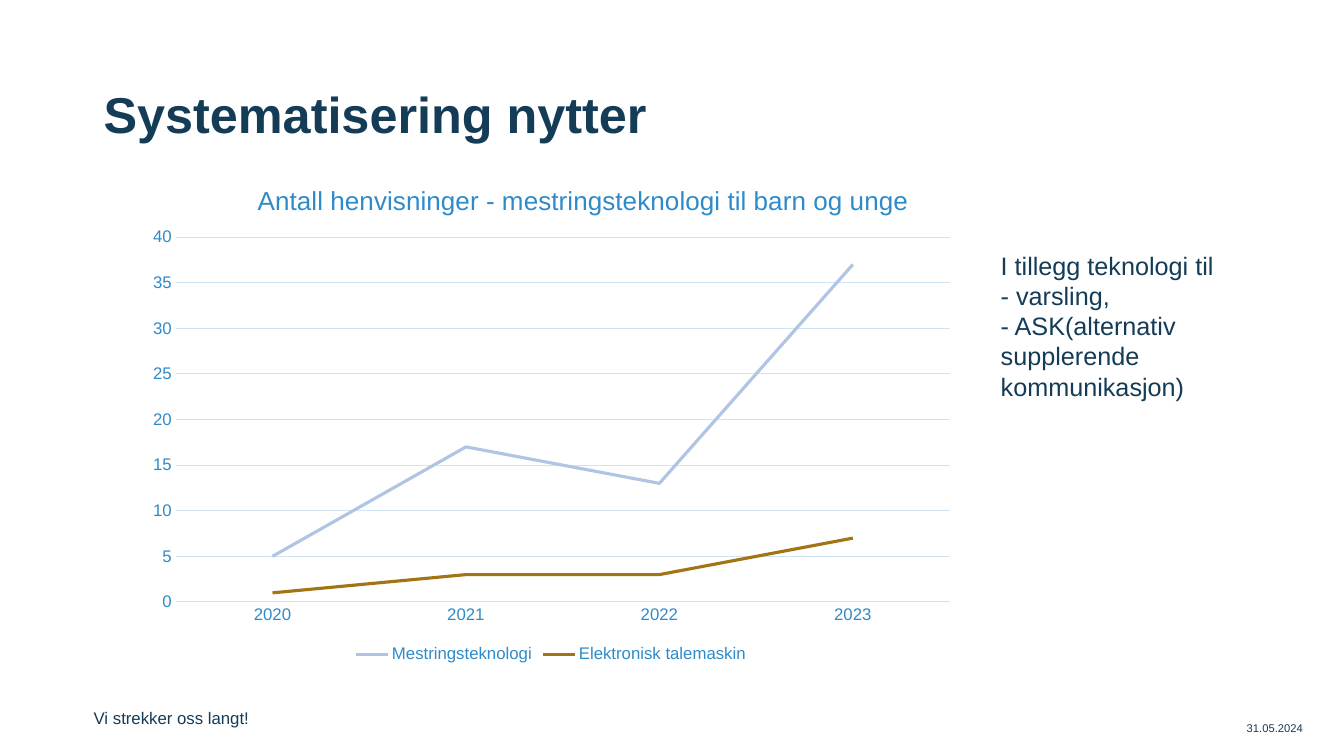
"""Builds a slide with a line chart of referrals for coping technology."""
from lxml import etree
from pptx import Presentation
from pptx.chart.data import CategoryChartData
from pptx.dml.color import RGBColor
from pptx.enum.chart import XL_CHART_TYPE, XL_LEGEND_POSITION, XL_TICK_MARK
from pptx.enum.text import MSO_ANCHOR
from pptx.oxml.ns import qn
from pptx.util import Cm, Pt

TOP, MIDDLE, BOTTOM = MSO_ANCHOR.TOP, MSO_ANCHOR.MIDDLE, MSO_ANCHOR.BOTTOM
LINE_CHART = XL_CHART_TYPE.LINE
LEGEND_BOTTOM = XL_LEGEND_POSITION.BOTTOM
NO_TICK = XL_TICK_MARK.NONE

FONT = "Arial"
NAVY, BLUE, GRID = "143C57", "2E8BCA", "CEE4F4"
NO_MARGINS = (0, 0, 0, 0)
TITLE_MARGINS = (0.25, 0.13, 0.25, 0)
BOX_MARGINS = (0.25, 0.13, 0.25, 0.13)

TEXTS = [
    {"lines": ["Systematisering nytter"], "at": (2.36, 1.75, 25.48, 1.9),
     "size": 36, "bold": True, "anchor": BOTTOM, "margins": TITLE_MARGINS, "spacing": 0.9},
    {"lines": ["31.05.2024"], "at": (31.42, 17.73, 1.65, 1.22),
     "size": 8, "anchor": MIDDLE, "margins": NO_MARGINS},
    {"lines": ["Vi strekker oss langt!"], "at": (2.36, 17.17, 8.05, 1.17),
     "size": 12, "anchor": BOTTOM, "margins": NO_MARGINS},
    {"lines": ["I tillegg teknologi til - varsling,",
               "- ASK(alternativ supplerende kommunikasjon)"],
     "at": (24.97, 6.17, 6.02, 4.11),
     "size": 18, "anchor": TOP, "margins": BOX_MARGINS},
]
CHART_AT = (3.45, 4.11, 20.88, 12.7)
CHART_TITLE = "Antall henvisninger - mestringsteknologi til barn og unge"
YEARS = ["2020", "2021", "2022", "2023"]
SERIES = [
    ("Mestringsteknologi", (5, 17, 13, 37), "B0C5E3"),
    ("Elektronisk talemaskin", (1, 3, 3, 7), "A27413"),
]
TITLE_LAYOUT = {"xMode": "edge", "yMode": "edge", "x": 0.14, "y": 0.03}
PLOT_LAYOUT = {"layoutTarget": "inner", "xMode": "edge", "yMode": "edge",
               "x": 0.047, "y": 0.147, "w": 0.934, "h": 0.724}


def color(value):
    return RGBColor.from_string(value)


def style_font(font, size, value, bold=False):
    for name, setting in {"name": FONT, "size": Pt(size), "bold": bold}.items():
        setattr(font, name, setting)
    font.color.rgb = color(value)


def style_line(line, value, width):
    line.color.rgb = color(value)
    line.width = Pt(width)


def add_text(slide, item):
    frame = slide.shapes.add_textbox(*map(Cm, item["at"])).text_frame
    left, top, right, bottom = map(Cm, item["margins"])
    settings = {"word_wrap": True, "vertical_anchor": item["anchor"],
                "margin_left": left, "margin_top": top,
                "margin_right": right, "margin_bottom": bottom}
    for name, setting in settings.items():
        setattr(frame, name, setting)
    frame.text = "\n".join(item["lines"])
    for paragraph in frame.paragraphs:
        paragraph.line_spacing = item.get("spacing", 1.0)
        style_font(paragraph.runs[0].font, item["size"], NAVY, item.get("bold", False))


def place(element, index, values):
    for old in element.findall(qn("c:layout")):
        element.remove(old)
    layout = etree.Element(qn("c:layout"))
    manual = etree.SubElement(layout, qn("c:manualLayout"))
    for name, value in values.items():
        etree.SubElement(manual, qn(f"c:{name}")).set("val", str(value))
    element.insert(index, layout)


def add_referral_chart(slide):
    data = CategoryChartData()
    data.categories = YEARS
    for name, values, _ in SERIES:
        data.add_series(name, values)
    chart = slide.shapes.add_chart(LINE_CHART, *map(Cm, CHART_AT), data).chart
    style_font(chart.font, 10, NAVY)

    title = chart.chart_title
    title.text_frame.text = CHART_TITLE
    style_font(title.text_frame.paragraphs[0].runs[0].font, 18.6, BLUE)
    place(title._element, 1, TITLE_LAYOUT)
    place(chart._chartSpace.chart.plotArea, 0, PLOT_LAYOUT)

    for axis in (chart.category_axis, chart.value_axis):
        axis.major_tick_mark = axis.minor_tick_mark = NO_TICK
        style_font(axis.tick_labels.font, 12, BLUE)
    style_line(chart.category_axis.format.line, GRID, 0.75)
    value_axis = chart.value_axis
    value_axis.format.line.fill.background()
    style_line(value_axis.major_gridlines.format.line, GRID, 0.75)
    for name, setting in {"minimum_scale": 0, "maximum_scale": 40, "major_unit": 5}.items():
        setattr(value_axis, name, setting)

    chart.has_legend = True
    chart.legend.position = LEGEND_BOTTOM
    chart.legend.include_in_layout = False
    style_font(chart.legend.font, 12, BLUE)

    plot = chart.plots[0]
    plot.vary_by_categories = False
    for series, (_, _, value) in zip(plot.series, SERIES):
        series.smooth = False
        style_line(series.format.line, value, 2.25)


def main():
    presentation = Presentation()
    presentation.slide_width, presentation.slide_height = Cm(33.87), Cm(19.05)
    slide = presentation.slides.add_slide(presentation.slide_layouts[6])
    add_referral_chart(slide)
    for item in TEXTS:
        add_text(slide, item)
    presentation.save("out.pptx")


if __name__ == "__main__":
    main()
